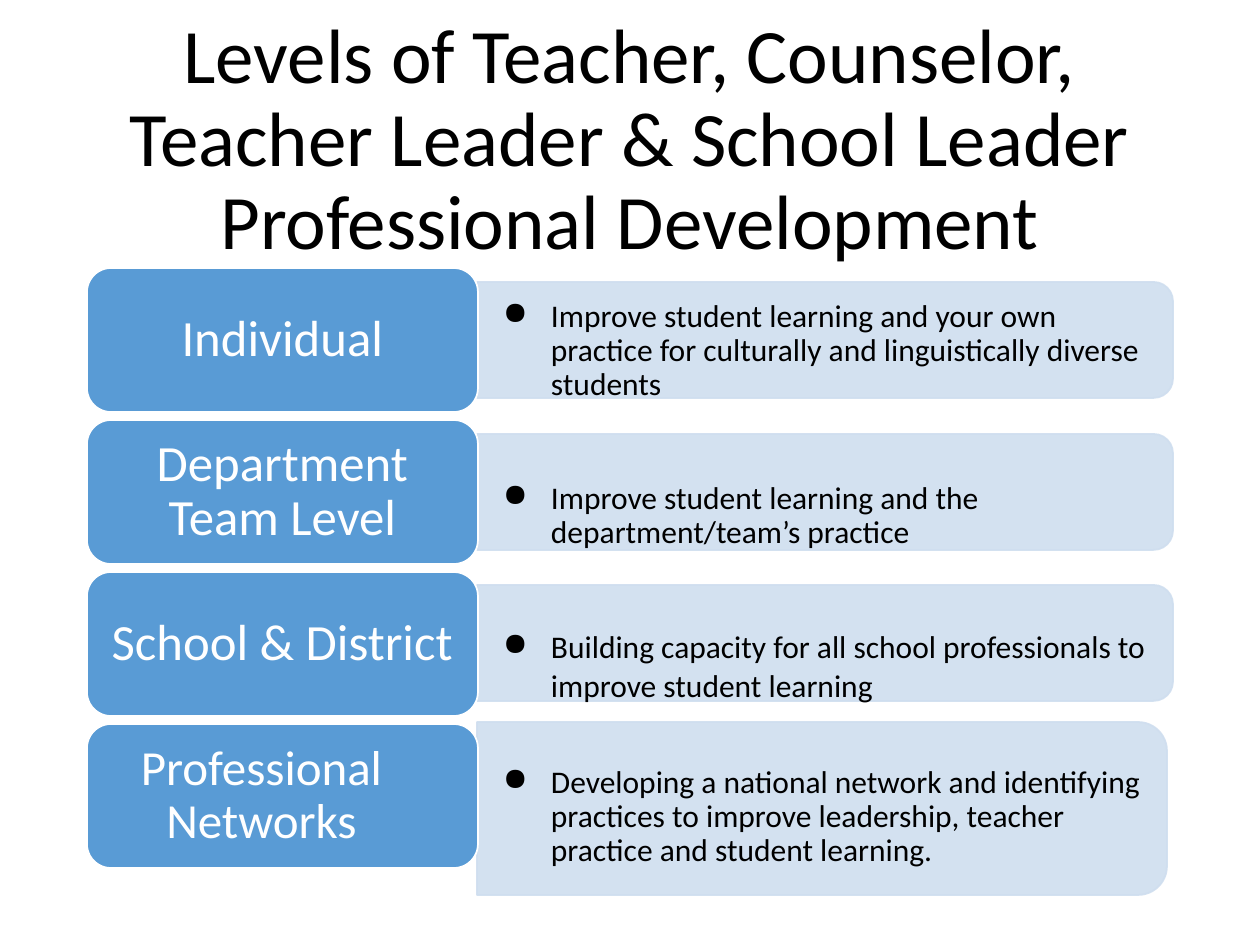
import dataclasses

import pptx
import pptx.dml.color
import pptx.enum.shapes
import pptx.enum.text
import pptx.oxml
import pptx.oxml.ns
import pptx.util

RGB = pptx.dml.color.RGBColor
SHAPE = pptx.enum.shapes.MSO_SHAPE
ALIGN = pptx.enum.text.PP_ALIGN
MIDDLE = pptx.enum.text.MSO_ANCHOR.MIDDLE
qn = pptx.oxml.ns.qn

BLACK = RGB(0x00, 0x00, 0x00)
WHITE = RGB(0xFF, 0xFF, 0xFF)
BLUE = RGB(0x59, 0x9B, 0xD5)
PALE = RGB(0xCF, 0xDE, 0xEF)

FONT = "Calibri"
SCALE = 914400 / 126
ROUND = 0.167

HEAD_X, HEAD_Y, HEAD_W, HEAD_H = 87, 268, 391, 144
PITCH = 152
PAD = 10
BODY_X, BODY_W, BODY_H = 477, 692, 100
INDENT, HANG = 63, 48


@dataclasses.dataclass(frozen=True)
class Level:
    label: str
    body: str
    mid: int  # vertical centre of the body text
    top: int
    width: int = 696
    height: int = 116
    size: int = 29
    shift: int = 0  # how far the label sits left of centre
    pace: float = 0.9


LEVELS = (
    Level("Individual",
          "Improve student learning and your own practice for culturally "
          "and linguistically diverse students", 351, 282),
    Level("Department\nTeam Level",
          "Improve student learning and the department/team’s practice",
          516, 434),
    Level("School & District",
          "Building capacity for all school professionals to improve "
          "student learning", 665, 585, pace=1.04),
    Level("Professional Networks",
          "Developing a national network and identifying practices to "
          "improve leadership, teacher practice and student learning.",
          817, 722, width=690, height=173, size=28, shift=21),
)


def px(num: float) -> pptx.util.Emu:
    return pptx.util.Emu(round(num * SCALE))


def write(shape, text: str, size: int, color: RGB, align=ALIGN.CENTER,
          pace: float = 0.9, left: int = PAD, right: int = PAD) -> None:
    frame = shape.text_frame
    frame.word_wrap = True
    frame.vertical_anchor = MIDDLE
    frame.margin_left, frame.margin_right = px(left), px(right)
    frame.margin_top = frame.margin_bottom = px(6)
    frame.text = text
    for para in frame.paragraphs:
        para.alignment = align
        para.line_spacing = pace
        para.font.name = FONT
        para.font.size = pptx.util.Pt(size)
        para.font.color.rgb = color


def paint(shape, fill: RGB, line: RGB) -> None:
    shape.shadow.inherit = False
    shape.fill.solid()
    shape.fill.fore_color.rgb = fill
    shape.line.color.rgb = line
    shape.line.width = pptx.util.Pt(1)


def fade(shape, share: int) -> None:
    """Set the opacity of fill and line, in percent."""
    for tint in shape.element.spPr.iter(qn("a:srgbClr")):
        alpha = pptx.oxml.parse_xml(
            f'<a:alpha {pptx.oxml.ns.nsdecls("a")} val="{share * 1000}"/>')
        tint.append(alpha)


def add_bullet(para) -> None:
    props = para._p.get_or_add_pPr()
    props.set("marL", str(px(INDENT)))
    props.set("indent", str(-px(HANG)))
    names = pptx.oxml.ns.nsdecls("a")
    for xml in (
        f'<a:buClr {names}><a:srgbClr val="{BLACK}"/></a:buClr>',
        f'<a:buChar {names} char="●"/>',
    ):
        props.append(pptx.oxml.parse_xml(xml))


def add_panel(slide, level: Level) -> None:
    """Draw the pale bar, turned so that its round corners face right."""
    wide, high = level.width, level.height
    left = BODY_X + (wide - high) / 2
    top = level.top + (high - wide) / 2
    panel = slide.shapes.add_shape(
        SHAPE.ROUND_2_SAME_RECTANGLE, px(left), px(top), px(high), px(wide))
    panel.rotation = 90
    panel.adjustments[0] = ROUND
    panel.adjustments[1] = 0
    paint(panel, PALE, PALE)
    fade(panel, 90)


def add_body(slide, level: Level) -> None:
    body = slide.shapes.add_textbox(
        px(BODY_X), px(level.mid - BODY_H / 2), px(BODY_W), px(BODY_H))
    write(body, level.body, 18, BLACK, ALIGN.LEFT, level.pace, 11, 11)
    add_bullet(body.text_frame.paragraphs[0])


def add_head(slide, level: Level, top: int) -> None:
    head = slide.shapes.add_shape(
        SHAPE.ROUNDED_RECTANGLE, px(HEAD_X), px(top), px(HEAD_W), px(HEAD_H))
    head.adjustments[0] = ROUND
    paint(head, BLUE, WHITE)
    write(head, level.label, level.size, WHITE, right=PAD + 2 * level.shift)


def main() -> None:
    deck = pptx.Presentation()
    deck.slide_width, deck.slide_height = px(1260), px(945)
    slide = deck.slides.add_slide(deck.slide_layouts[6])

    title = slide.shapes.add_textbox(px(87), px(50), px(1086), px(183))
    write(title, "Levels of Teacher, Counselor, Teacher Leader & School "
          "Leader Professional Development", 44, BLACK, left=13, right=13)

    for row, level in enumerate(LEVELS):
        add_panel(slide, level)
        add_body(slide, level)
        add_head(slide, level, HEAD_Y + row * PITCH)

    deck.save("out.pptx")


if __name__ == "__main__":
    main()
